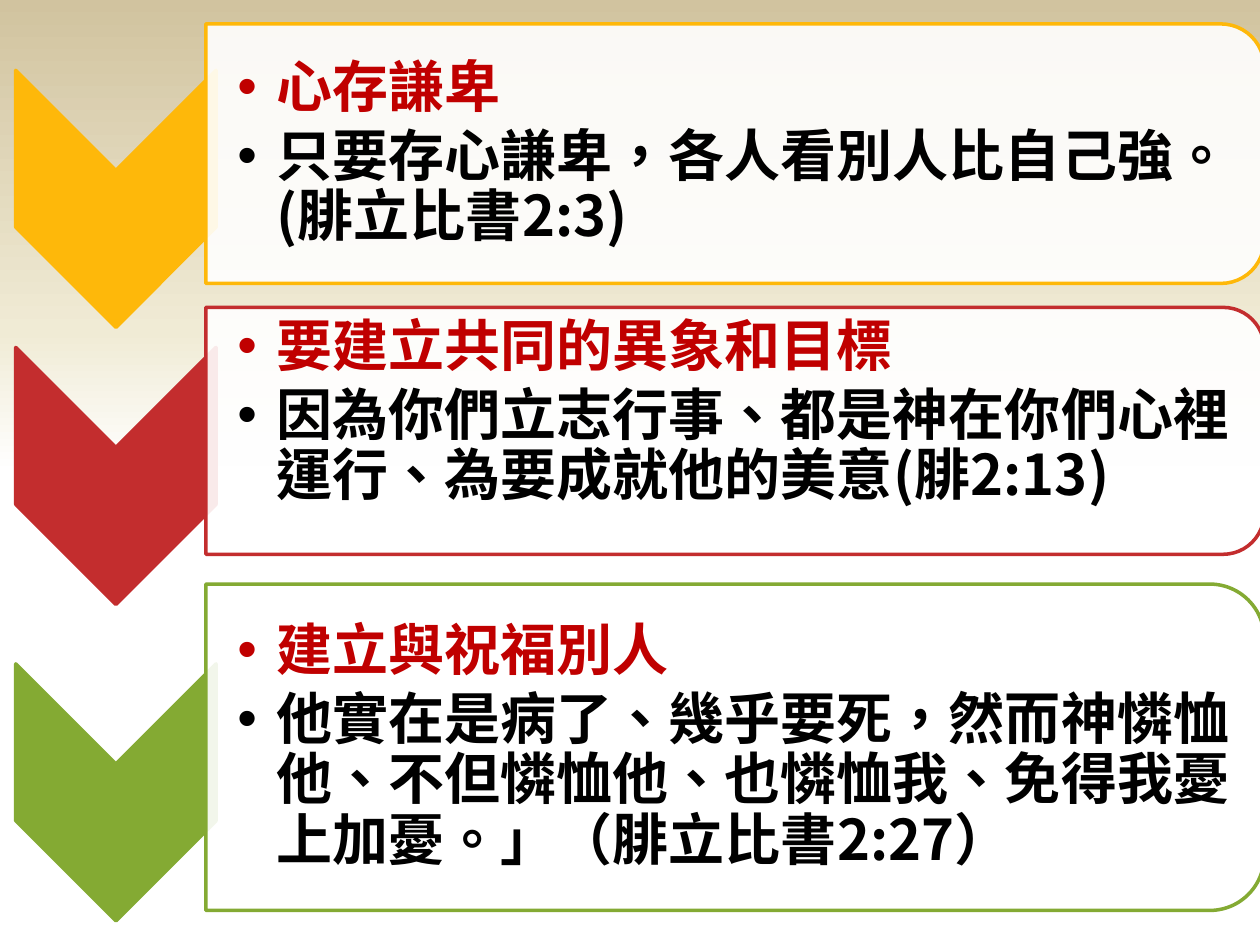
"""Build a slide of three chevron cards, each with a heading and a verse."""
import copy
from dataclasses import dataclass

import pptx
import pptx.dml.color
import pptx.enum.shapes
import pptx.enum.text
import pptx.oxml.ns
import pptx.util

Pt = pptx.util.Pt
RGB = pptx.dml.color.RGBColor
SHAPE = pptx.enum.shapes.MSO_SHAPE
qn = pptx.oxml.ns.qn

AMBER = RGB(0xFE, 0xB8, 0x0A)
RED = RGB(0xC3, 0x2D, 0x2E)
GREEN = RGB(0x84, 0xAA, 0x33)
WHITE = RGB(0xFF, 0xFF, 0xFF)
CREAM = RGB(0xF0, 0xEB, 0xD5)
SAND = RGB(0xD1, 0xC3, 0x9F)
HEADING = RGB(0xC0, 0x00, 0x00)
BLACK = RGB(0x00, 0x00, 0x00)

FONT = "Noto Sans CJK SC"
BACKDROP = ((0.5, WHITE), (0.65, CREAM), (1, SAND))
CHEVRON_X, CHEVRON_DROP = 66.24, 25.8
CHEVRON_LENGTH, CHEVRON_WIDTH = 146.9, 114.5
PANEL_LEFT, PANEL_LENGTH = 117.6, 604.8
CORNER_INSET = 0.29 / 6
INDENT = 22.5
MARGIN = 1.6
FRAME = {
    "margin_left": Pt(18), "margin_right": Pt(MARGIN), "margin_top": Pt(MARGIN),
    "word_wrap": True,
    "auto_size": pptx.enum.text.MSO_AUTO_SIZE.NONE,
    "vertical_anchor": pptx.enum.text.MSO_ANCHOR.MIDDLE,
}
PARAGRAPH = {
    "level": 1, "line_spacing": 0.9,
    "space_before": Pt(0), "space_after": Pt(4.8),
    "alignment": pptx.enum.text.PP_ALIGN.LEFT,
}
CHARACTER = {"name": FONT, "size": Pt(32), "bold": True}


@dataclass
class Card:
    color: RGB
    middle: float
    height: float
    heading: str
    verse: str
    foot: float = MARGIN


CARDS = (
    Card(AMBER, 87.84, 148.3, "心存謙卑",
         "只要存心謙卑，各人看別人比自己強。(腓立比書2:3)"),
    Card(RED, 246.2, 141.1, "要建立共同的異象和目標",
         "因為你們立志行事、都是神在你們心裡運行、為要成就他的美意(腓2:13)",
         foot=22),
    Card(GREEN, 427, 186.5, "建立與祝福別人",
         "他實在是病了、幾乎要死，然而神憐恤他、不但憐恤他、也憐恤我、"
         "免得我憂上加憂。」（腓立比書2:27）"),
)


def apply(target: object, values: dict) -> None:
    for name, value in values.items():
        setattr(target, name, value)


def add_turned(s, kind: SHAPE, x: float, y: float, w: float, h: float,
               fill: RGB, line: RGB):
    sp = s.shapes.add_shape(kind, Pt(x - w / 2), Pt(y - h / 2), Pt(w), Pt(h))
    sp.rotation = 90
    sp.shadow.inherit = False
    sp.fill.solid()
    sp.fill.fore_color.rgb = fill
    sp.line.color.rgb = line
    sp.line.width = Pt(2)
    return sp


def write_bullet(p, text: str, color: RGB) -> None:
    p.text = text
    apply(p, PARAGRAPH)
    pPr = p._p.get_or_add_pPr()
    pPr.set("marL", str(Pt(INDENT)))
    pPr.set("indent", str(-Pt(INDENT)))
    pPr.append(pPr.makeelement(qn("a:buChar"), {"char": "•"}))
    r = p.runs[0]
    apply(r.font, CHARACTER)
    r.font.color.rgb = color
    rPr = r._r.get_or_add_rPr()
    rPr.set("lang", "zh-TW")
    rPr.append(rPr.makeelement(qn("a:ea"), {"typeface": FONT}))


def draw_card(s, card: Card, body) -> None:
    add_turned(s, SHAPE.CHEVRON, CHEVRON_X, card.middle + CHEVRON_DROP,
               CHEVRON_LENGTH, CHEVRON_WIDTH, card.color, card.color)
    panel = add_turned(s, SHAPE.ROUND_2_SAME_RECTANGLE,
                       PANEL_LEFT + PANEL_LENGTH / 2, card.middle,
                       card.height, PANEL_LENGTH, WHITE, card.color)
    white = panel._element.spPr.find(qn("a:solidFill"))[0]
    white.append(white.makeelement(qn("a:alpha"), {"val": "90000"}))

    inset = card.height * CORNER_INSET
    apply(body, {
        "left": Pt(PANEL_LEFT), "top": Pt(card.middle - card.height / 2 + inset),
        "width": Pt(PANEL_LENGTH - inset), "height": Pt(card.height - 2 * inset),
    })
    s.shapes._spTree.append(body._element)
    tf = body.text_frame
    apply(tf, {**FRAME, "margin_bottom": Pt(card.foot)})
    write_bullet(tf.paragraphs[0], card.heading, HEADING)
    write_bullet(tf.add_paragraph(), card.verse, BLACK)


def paint_background(s) -> None:
    fill = s.background.fill
    fill.gradient()
    fill.gradient_angle = 90
    first = next(s.element.iter(qn("a:gs")))
    first.addnext(copy.deepcopy(first))
    for stop, (position, color) in zip(fill.gradient_stops, BACKDROP):
        stop.position = position
        stop.color.rgb = color


def main() -> None:
    prs = pptx.Presentation()
    prs.slide_width, prs.slide_height = Pt(720), Pt(540)
    s = prs.slides.add_slide(prs.slide_layouts.get_by_name("Comparison"))
    paint_background(s)
    title, *bodies = s.placeholders
    for card, body in zip(CARDS, bodies):
        draw_card(s, card, body)
    for unused in (title, *bodies[len(CARDS):]):
        s.shapes._spTree.remove(unused._element)
    prs.save("out.pptx")


if __name__ == "__main__":
    main()
